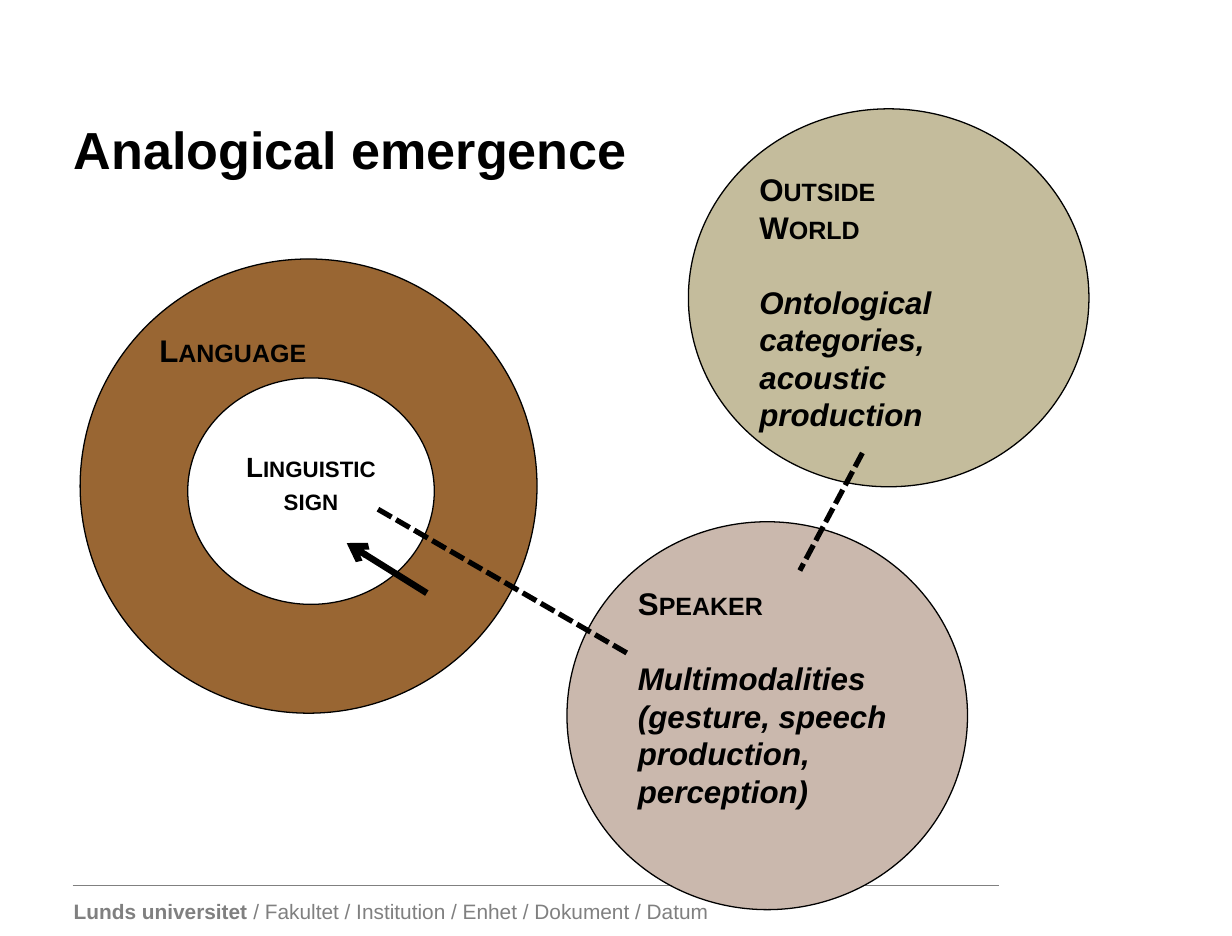
from dataclasses import dataclass

from lxml import etree
from pptx import Presentation
from pptx import util as u
from pptx.dml.color import RGBColor
from pptx.enum import dml, shapes, text
from pptx.oxml import ns

FONT = "Arial"
BLACK = "000000"
GREY = "808080"
CM_PER_INCH = 2.54


@dataclass
class Para:
    text: str
    heading: bool = False  # small caps; otherwise italic
    space_before: float = 0


@dataclass
class Circle:
    box: tuple[float, float, float, float]
    fill: str
    paras: list[Para]
    size: float = 18
    centred: bool = False
    inset_top: float = 0.05


@dataclass
class Line:
    start: tuple[float, float]
    end: tuple[float, float]
    width: float = 3
    color: str = BLACK
    dashed: bool = False
    arrow: bool = False


GAP = 21.5  # one line of 18 pt text

CIRCLES = [
    Circle((0.64, 2.07, 3.65, 3.63), "996633", [Para("Language", True)]),
    Circle((1.5, 3.02, 1.97, 1.81), "FFFFFF",
           [Para("Linguistic", True), Para("sign", True)],
           size=16, centred=True, inset_top=0.31),
    Circle((5.5, 0.87, 3.2, 3.02), "C4BC9C",
           [Para("Outside", True), Para("World", True),
            Para("Ontological categories, acoustic production", space_before=GAP)]),
    Circle((4.53, 4.17, 3.2, 3.1), "CAB8AD",
           [Para("Speaker", True),
            Para("Multimodalities", space_before=GAP),
            Para("(gesture, speech production, perception)")]),
]

FOOTER_RULE = Line((0.58, 7.08), (7.98, 7.08), 0.5, GREY)
LINKS = [
    Line((3.41, 4.74), (2.77, 4.34), 3.75, arrow=True),
    Line((3.02, 4.07), (5.01, 5.22), dashed=True),
    Line((6.89, 3.62), (6.39, 4.56), dashed=True),
]


def rgb(color: str) -> RGBColor:
    return RGBColor.from_string(color)


def set_font(font, size: float, color: str = BLACK) -> None:
    font.name = FONT
    font.size = u.Pt(size)
    font.color.rgb = rgb(color)


def add_text(slide, box: tuple[float, float, float, float], wrap: bool):
    tf = slide.shapes.add_textbox(*map(u.Inches, box)).text_frame
    tf.word_wrap = wrap
    return tf


def add_circle(slide, circle: Circle) -> None:
    sp = slide.shapes.add_shape(shapes.MSO_SHAPE.OVAL, *map(u.Inches, circle.box))
    sp.shadow.inherit = False
    sp.fill.solid()
    sp.fill.fore_color.rgb = rgb(circle.fill)
    sp.line.color.rgb = rgb(BLACK)
    sp.line.width = u.Pt(0.75)
    tf = sp.text_frame
    tf.word_wrap = True
    tf.vertical_anchor = text.MSO_ANCHOR.TOP
    tf.margin_top = u.Inches(circle.inset_top)
    for i, para in enumerate(circle.paras):
        p = tf.add_paragraph() if i else tf.paragraphs[0]
        p.text = para.text
        p.alignment = text.PP_ALIGN.CENTER if circle.centred else text.PP_ALIGN.LEFT
        if para.space_before:
            p.space_before = u.Pt(para.space_before)
        set_font(p.font, circle.size)
        p.font.bold = True
        if para.heading:
            for r in p.runs:
                r._r.get_or_add_rPr().set("cap", "small")
        else:
            p.font.italic = True


def add_line(slide, line: Line) -> None:
    cx = slide.shapes.add_connector(shapes.MSO_CONNECTOR.STRAIGHT,
                                    *map(u.Inches, line.start + line.end))
    cx.line.color.rgb = rgb(line.color)
    cx.line.width = u.Pt(line.width)
    if line.dashed:
        cx.line.dash_style = dml.MSO_LINE.SQUARE_DOT
    if line.arrow:
        etree.SubElement(cx.line._get_or_add_ln(), ns.qn("a:tailEnd"), type="arrow")
    etree.SubElement(cx._element.spPr, ns.qn("a:effectLst"))


def main() -> None:
    # Slide of 25 by 19 cm
    prs = Presentation()
    prs.slide_width = u.Inches(25 / CM_PER_INCH)
    prs.slide_height = u.Inches(19 / CM_PER_INCH)
    s = prs.slides.add_slide(prs.slide_layouts[6])

    # Footer
    p = add_text(s, (0.49, 7.13, 5.28, 0.3), wrap=False).paragraphs[0]
    set_font(p.font, 12, GREY)
    r = p.add_run()
    r.text = "Lunds universitet"
    r.font.bold = True
    p.add_run().text = " / Fakultet / Institution / Enhet / Dokument / Datum"
    add_line(s, FOOTER_RULE)

    # Title
    tf = add_text(s, (0.49, 0.56, 8.86, 1.25), wrap=True)
    tf.vertical_anchor = text.MSO_ANCHOR.MIDDLE
    p = tf.paragraphs[0]
    p.text = "Analogical emergence"
    set_font(p.font, 30)
    p.font.bold = True

    # Circles and the links between them
    for circle in CIRCLES:
        add_circle(s, circle)
    for link in LINKS:
        add_line(s, link)

    prs.save("out.pptx")


if __name__ == "__main__":
    main()
